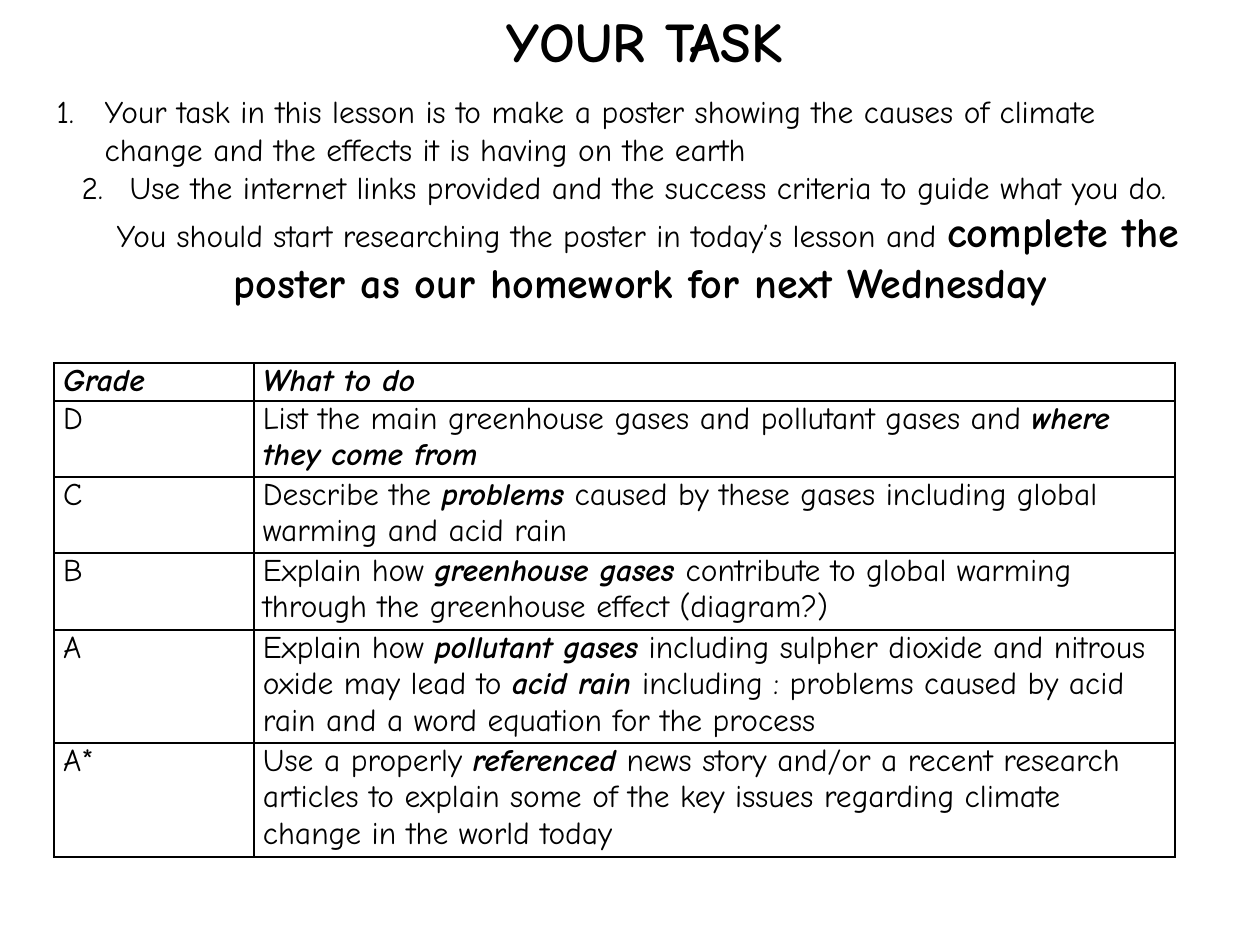
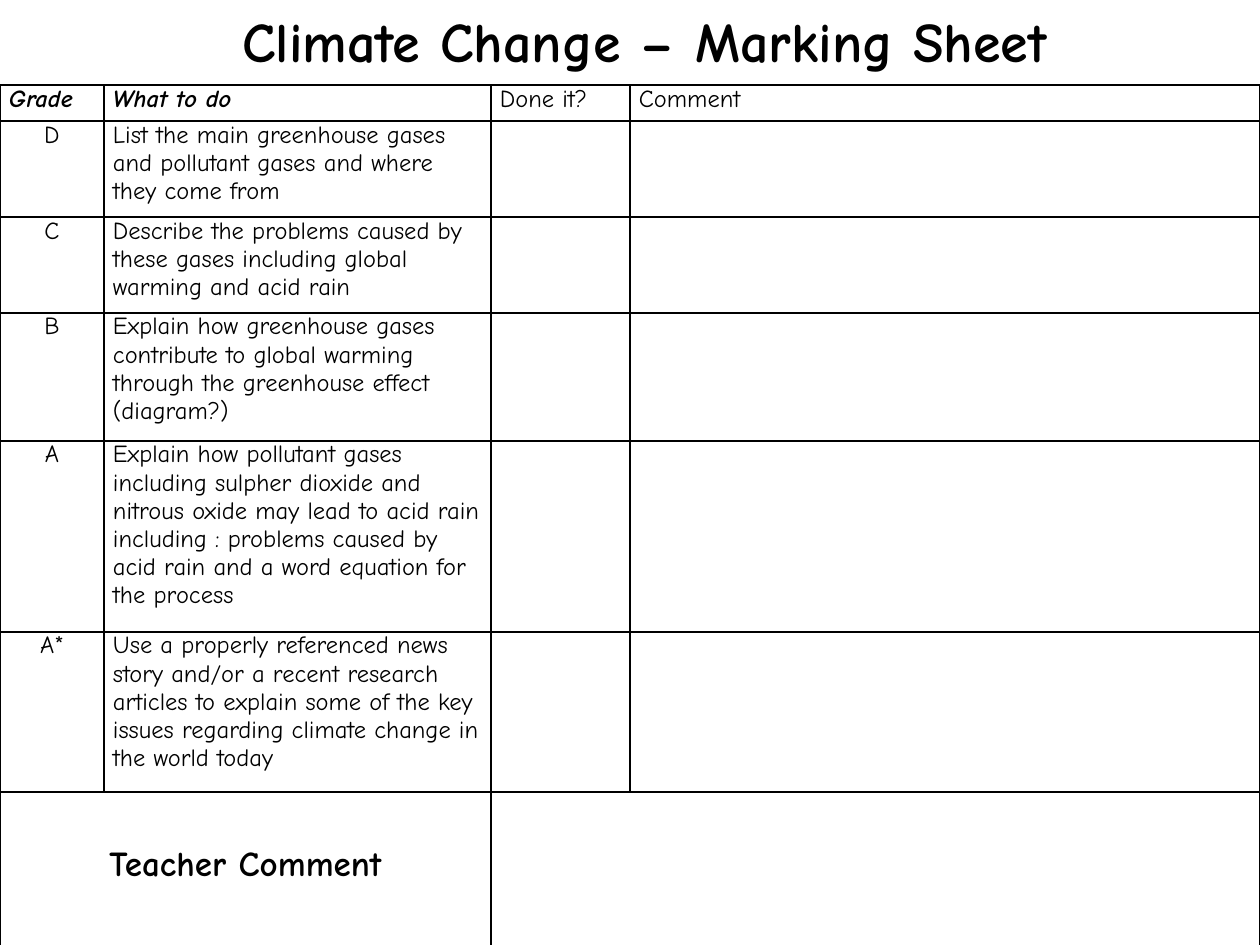
import pptx
import pptx.util
import pptx.dml.color
import pptx.enum.text
import pptx.oxml.ns
import lxml.etree

PX = 914400 / 126
SLIDE_SIZE = (1260, 945)
FONT = "Comic Neue"
BLACK = pptx.dml.color.RGBColor(0x00, 0x00, 0x00)
CENTER = pptx.enum.text.PP_ALIGN.CENTER
LEFT = pptx.enum.text.PP_ALIGN.LEFT
TOP = pptx.enum.text.MSO_ANCHOR.TOP
MIDDLE = pptx.enum.text.MSO_ANCHOR.MIDDLE
TITLE_BOX = (74, 0, 1142, 168)
CELL_MARGIN = 9
NUMBER_INDENT = 48

# Text between bars is emphasised.
GRADES = [
    ("D", "List the main greenhouse gases and pollutant gases and |where they come from"),
    ("C", "Describe the |problems| caused by these gases including global warming and acid rain"),
    ("B", "Explain how |greenhouse gases |contribute to global warming through the "
          "greenhouse effect (diagram?)"),
    ("A", "Explain how |pollutant gases| including sulpher dioxide and nitrous oxide may "
          "lead to |acid rain |including : problems caused by acid rain and a word "
          "equation for the process"),
    ("A*", "Use a properly |referenced| news story and/or a recent research articles to "
           "explain some of the key issues regarding climate change in the world today"),
]


def px(length):
    return pptx.util.Emu(round(length * PX))


def place(shape, box):
    shape.left, shape.top, shape.width, shape.height = map(px, box)


def add_run(paragraph, text, size, bold=False, italic=False):
    run = paragraph.add_run()
    run.text = text
    run.font.name = FONT
    run.font.size = pptx.util.Pt(size)
    run.font.bold = bold
    run.font.italic = italic
    run.font.color.rgb = BLACK


def add_marked_text(paragraph, text, size):
    for index, part in enumerate(text.split("|")):
        if part:
            emphasised = index % 2 == 1
            add_run(paragraph, part, size, emphasised, emphasised)


def prepare_frame(shape):
    frame = shape.text_frame
    frame.word_wrap = True
    frame.auto_size = pptx.enum.text.MSO_AUTO_SIZE.NONE
    frame.vertical_anchor = TOP
    return frame


def add_title(slide, box, text):
    title = slide.shapes.title
    place(title, box)
    paragraph = prepare_frame(title).paragraphs[0]
    paragraph.alignment = CENTER
    add_run(paragraph, text, 32, bold=True)


def add_instructions(slide, box, items):
    body = slide.placeholders[1]
    place(body, box)
    frame = prepare_frame(body)
    for index, (alignment, runs) in enumerate(items):
        paragraph = frame.add_paragraph() if index else frame.paragraphs[0]
        paragraph.alignment = alignment
        paragraph.space_before = pptx.util.Pt(0)
        properties = paragraph._p.get_or_add_pPr()
        properties.set("marL", str(px(NUMBER_INDENT)))
        properties.set("indent", str(-px(NUMBER_INDENT)))
        number = lxml.etree.SubElement(properties, pptx.oxml.ns.qn("a:buAutoNum"))
        number.set("type", "arabicPeriod")
        for text, size, bold in runs:
            add_run(paragraph, text, size, bold)


def style_cell(cell):
    cell.margin_left = cell.margin_right = px(CELL_MARGIN)
    cell.margin_top = cell.margin_bottom = 0
    cell.vertical_anchor = TOP
    properties = cell._tc.get_or_add_tcPr()
    for side in ("lnL", "lnR", "lnT", "lnB"):
        line = lxml.etree.SubElement(properties, pptx.oxml.ns.qn("a:" + side))
        line.set("w", str(pptx.util.Pt(1)))
        fill = lxml.etree.SubElement(line, pptx.oxml.ns.qn("a:solidFill"))
        color = lxml.etree.SubElement(fill, pptx.oxml.ns.qn("a:srgbClr"))
        color.set("val", str(BLACK))
    cell.fill.background()


def add_grid(slide, left, top, widths, heights):
    box = map(px, (left, top, sum(widths), sum(heights)))
    table = slide.shapes.add_table(len(heights), len(widths), *box).table
    table.first_row = False
    table.horz_banding = False
    for column, width in zip(table.columns, widths):
        column.width = px(width)
    for row, height in zip(table.rows, heights):
        row.height = px(height)
    for cell in table.iter_cells():
        style_cell(cell)
    return table


def fill_grid(table, rows, size, grade_alignment):
    for row_index, row in enumerate(rows):
        for column_index, text in enumerate(row):
            paragraph = table.cell(row_index, column_index).text_frame.paragraphs[0]
            if row_index and column_index == 0:
                paragraph.alignment = grade_alignment
            add_marked_text(paragraph, text, size)


def add_teacher_comment(table):
    last = len(table.rows) - 1
    for column in (0, 2):
        table.cell(last, column).merge(table.cell(last, column + 1))
    cell = table.cell(last, 0)
    cell.vertical_anchor = MIDDLE
    cell.margin_bottom = px(14)
    paragraph = cell.text_frame.paragraphs[0]
    paragraph.alignment = CENTER
    add_run(paragraph, "Teacher Comment", 20, bold=True)


def build_task_slide(presentation):
    slide = presentation.slides.add_slide(presentation.slide_layouts[1])
    add_title(slide, TITLE_BOX, "YOUR TASK")
    add_instructions(slide, (44, 86, 1160, 267), [
        (LEFT, [("Your task in this lesson is to make a poster showing the causes of "
                 "climate change and the effects it is having on the earth", 18, False)]),
        (CENTER, [("Use the internet links provided and the success criteria to guide "
                   "what you do. You should start researching the poster in today’s "
                   "lesson and ", 18, False),
                  ("complete the poster as our homework for next Wednesday ", 24, True)]),
    ])
    table = add_grid(slide, 54, 363, (200, 921), (38, 76, 76, 77, 113, 114))
    fill_grid(table, [("|Grade", "|What to do")] + GRADES, 18, LEFT)


def build_marking_slide(presentation):
    slide = presentation.slides.add_slide(presentation.slide_layouts[5])
    add_title(slide, TITLE_BOX, "Climate Change – Marking Sheet")
    table = add_grid(slide, 0, 85, (104, 387, 139, 630),
                     (36, 96, 96, 128, 191, 160, 160))
    header = ("|Grade", "|What to do", "Done it?", "Comment")
    plain_grades = [(grade, task.replace("|", "")) for grade, task in GRADES]
    fill_grid(table, [header] + plain_grades, 14, CENTER)
    add_teacher_comment(table)


def main():
    presentation = pptx.Presentation()
    presentation.slide_width, presentation.slide_height = map(px, SLIDE_SIZE)
    build_task_slide(presentation)
    build_marking_slide(presentation)
    presentation.save("out.pptx")


if __name__ == "__main__":
    main()
